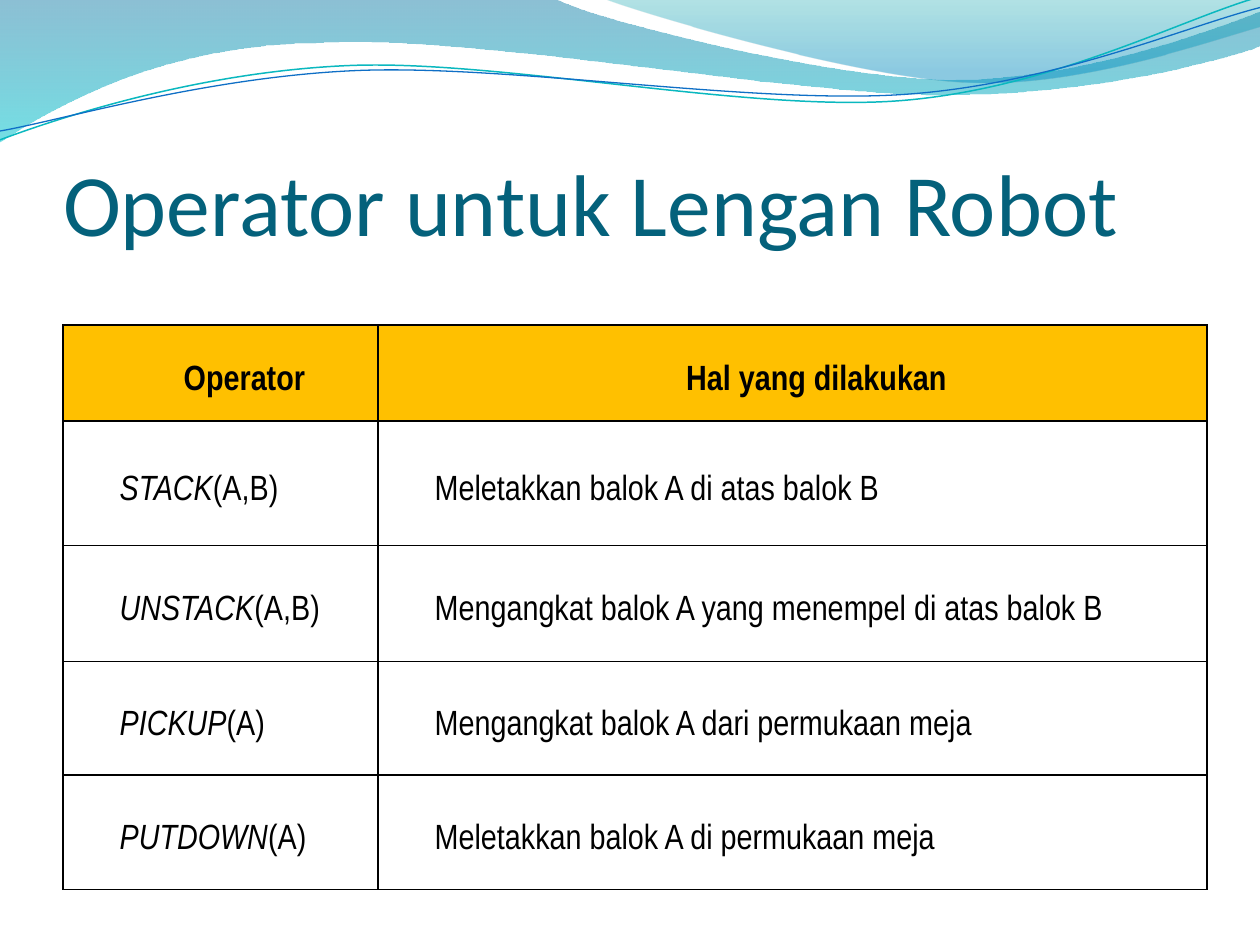
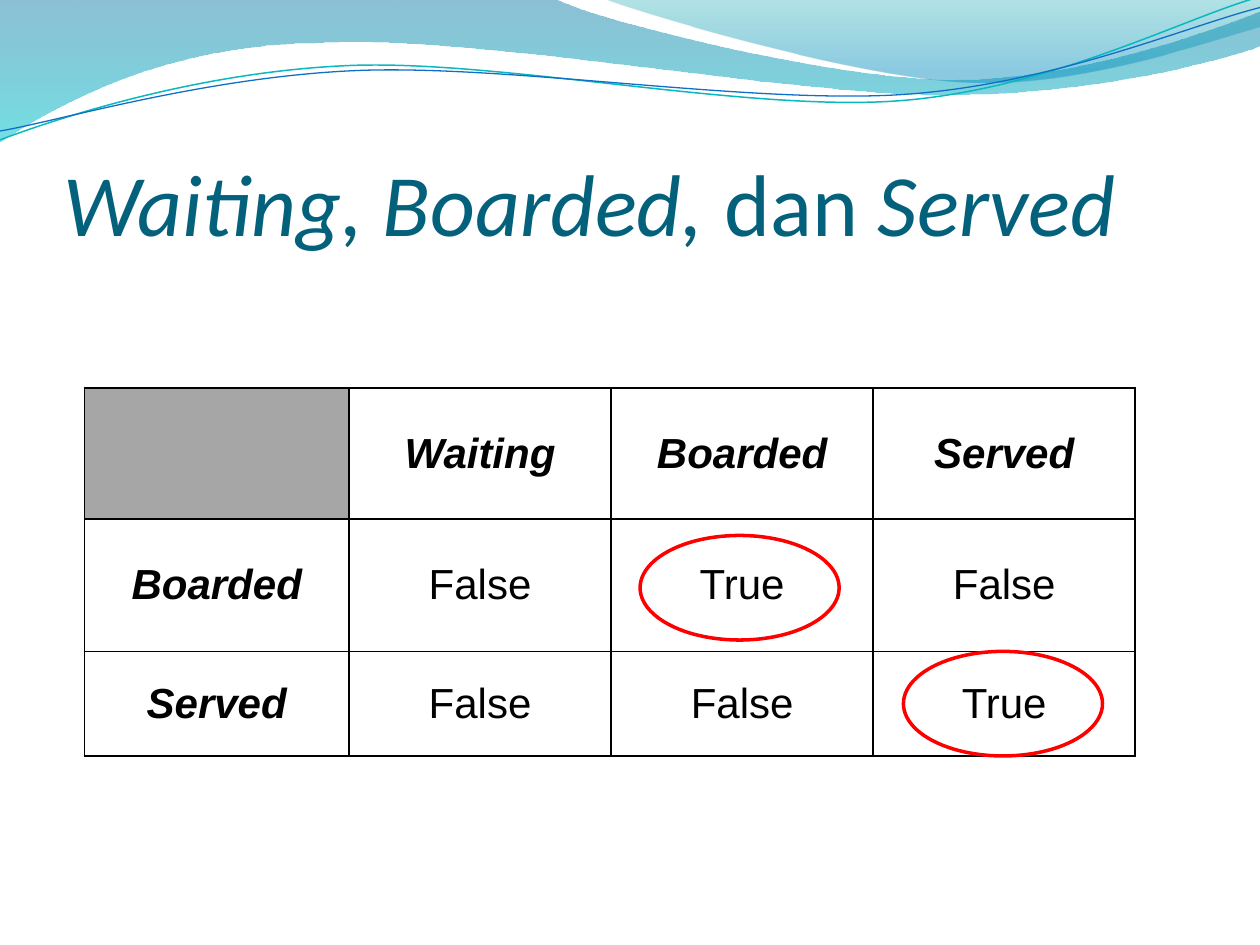
from math import cos, radians, sin

from lxml import etree
from pptx import Presentation
from pptx.dml.color import RGBColor
from pptx.enum.shapes import MSO_SHAPE
from pptx.enum.text import MSO_ANCHOR, MSO_AUTO_SIZE, PP_ALIGN
from pptx.oxml.ns import qn
from pptx.util import Inches, Pt

OVAL = MSO_SHAPE.OVAL
MIDDLE, BOTTOM = MSO_ANCHOR.MIDDLE, MSO_ANCHOR.BOTTOM
LEFT, CENTER, JUSTIFY = PP_ALIGN.LEFT, PP_ALIGN.CENTER, PP_ALIGN.JUSTIFY
FIXED = MSO_AUTO_SIZE.NONE

BLACK = RGBColor(0x00, 0x00, 0x00)
TEAL = RGBColor(0x04, 0x61, 0x7B)
GOLD = RGBColor(0xFF, 0xC0, 0x00)
GRAY = RGBColor(0xA6, 0xA6, 0xA6)
RED = RGBColor(0xFF, 0x00, 0x00)
AQUA = RGBColor(0x0A, 0xB8, 0xBF)
BLUE = RGBColor(0x0F, 0x6F, 0xC6)
DEEP = RGBColor(0x00, 0x74, 0xA1)
CYAN = RGBColor(0x00, 0xC6, 0xCF)
JADE = RGBColor(0x00, 0xA1, 0xA9)
SKY = RGBColor(0x00, 0x8B, 0xBF)

# Text is a list of runs: (words, style), style made of "b" and "i"
ROBOT_TITLE = [("Operator untuk Lengan Robot", "")]
ROBOT_HEAD = ["Operator", "Hal yang dilakukan"]
ROBOT_ACTS = [
    ("STACK", "(A,B)", "Meletakkan balok A di atas balok B"),
    ("UNSTACK", "(A,B)", "Mengangkat balok A yang menempel di atas balok B"),
    ("PICKUP", "(A)", "Mengangkat balok A dari permukaan meja"),
    ("PUTDOWN", "(A)", "Meletakkan balok A di permukaan meja"),
]
ROBOT_COLS, ROBOT_ROWS = [2.5, 6.58], [0.76, 0.99, 0.92, 0.9, 0.91]

STATE_TITLE = [("Waiting, Boarded, ", "i"), ("dan ", ""), ("Served", "i")]
STATE_GRID = [
    ["", "Waiting", "Boarded", "Served"],
    ["Boarded", "False", "True", "False"],
    ["Served", "False", "False", "True"],
]
STATE_COLS, STATE_ROWS = [2.1, 2.08, 2.08, 2.08], [1.04, 1.05, 0.83]
RINGS = [(5.08, 4.25), (7.17, 5.17)]

# Each wave is a start point and segments: 2 numbers a line, 6 a curve.
# Bands are (stops, start, segments), a stop being (place, colour, alpha %).
BANDS = [
    ([(0, DEEP, 45), (1, CYAN, 55)], (0, -0.01), [
        (4.4, -0.01), (4.76, 0.17, 6.64, 0.63, 7.58, 0.63),
        (8.53, 0.63, 9.58, 0.26, 10, 0.09), (10.01, 0.36),
        (9.83, 0.44, 8.7, 0.76, 7.46, 0.75),
        (6.22, 0.75, 3.82, 0.28, 2.57, 0.34),
        (1.29, 0.35, 0.46, 0.83, -0.01, 1.13)]),
    ([(0, JADE, 30), (0.8, SKY, 45)], (4.79, -0.01), [
        (5.09, 0.11, 6.82, 0.62, 7.69, 0.65),
        (8.56, 0.69, 9.61, 0.32, 10, 0.21), (10, 0)]),
]
LINES = [
    (AQUA, 0.85, (0, 1.11), [
        (0.48, 0.93, 1.58, 0.57, 2.77, 0.52),
        (3.95, 0.47, 5.93, 0.89, 7.13, 0.8),
        (8.33, 0.71, 9.38, 0.15, 9.98, -0.02)]),
    (BLUE, 0.75, (0, 1.04), [
        (0.47, 0.96, 1.64, 0.61, 2.83, 0.56),
        (4.03, 0.51, 5.97, 0.83, 7.17, 0.75),
        (8.36, 0.67, 9.41, 0.21, 10, 0.06)]),
]
TILT, PIVOT = 2.7, (4.99, 0.58)


# Waves
def turn(point, angle):
    """Turn a point clockwise about the pivot."""
    dx, dy = (a - b for a, b in zip(point, PIVOT))
    c, s = cos(radians(angle)), sin(radians(angle))
    return PIVOT[0] + dx * c - dy * s, PIVOT[1] + dx * s + dy * c


def add_wave(slide, start, parts, close, tilt=0):
    knots = [start]
    for part in parts:
        knots += zip(part[::2], part[1::2])
    pts = [tuple(Inches(n) for n in turn(knot, tilt)) for knot in knots]
    pen = slide.shapes.build_freeform(*pts[0])
    pen.add_line_segments(pts[1:], close=close)
    wave = pen.convert_to_shape()
    wave.shadow.inherit = False
    wave.rotation = -tilt
    # Join each three points of a curve into one cubic segment
    legs = iter(list(wave.element.iter(qn("a:lnTo"))))
    for part in parts:
        leg = next(legs)
        if len(part) == 6:
            leg.tag = qn("a:cubicBezTo")
            for _ in range(2):
                extra = next(legs)
                leg.append(extra[0])
                extra.getparent().remove(extra)
    return wave


def add_waves(slide, layout):
    """Draw the waves and move them to the layout that the slides share."""
    waves = []
    for stops, start, parts in BANDS:
        wave = add_wave(slide, start, parts, True)
        wave.line.fill.background()
        wave.fill.gradient()
        wave.fill.gradient_angle = 270
        for stop, (place, color, alpha) in zip(wave.fill.gradient_stops, stops):
            stop.position = place
            stop.color.rgb = color
        for tint, (_, _, alpha) in zip(wave.element.iter(qn("a:srgbClr")), stops):
            etree.SubElement(tint, qn("a:alpha"), val=str(alpha * 1000))
        waves.append(wave)
    for color, width, start, parts in LINES:
        wave = add_wave(slide, start, parts, False, TILT)
        wave.fill.background()
        wave.line.color.rgb = color
        wave.line.width = Pt(width)
        waves.append(wave)
    for spot, wave in enumerate(waves, 2):
        layout.shapes.element.insert(spot, wave.element)


# Text
def add_runs(para, runs, font, size, color):
    for words, style in runs:
        run = para.add_run()
        run.text = words
        run.font.name = font
        run.font.size = Pt(size)
        run.font.color.rgb = color
        run.font.bold = "b" in style
        run.font.italic = "i" in style


def set_title(slide, runs):
    title = slide.shapes.title
    title.left, title.top = Inches(0.5), Inches(0.77)
    title.width, title.height = Inches(9.08), Inches(1.25)
    frame = title.text_frame
    frame.auto_size = FIXED
    frame.word_wrap = True
    frame.vertical_anchor = BOTTOM
    frame.margin_left = frame.margin_right = frame.margin_bottom = 0
    frame.margin_top = Inches(0.05)
    para = frame.paragraphs[0]
    para.alignment = LEFT
    add_runs(para, runs, "Calibri", 50, TEAL)


# Tables
def set_cell(cell, fill):
    props = cell._tc.get_or_add_tcPr()
    for side in ("lnL", "lnR", "lnT", "lnB"):
        line = etree.SubElement(props, qn("a:" + side), w=str(Pt(1)))
        solid = etree.SubElement(line, qn("a:solidFill"))
        etree.SubElement(solid, qn("a:srgbClr"), val=str(BLACK))
    if fill is None:
        cell.fill.background()
    else:
        cell.fill.solid()
        cell.fill.fore_color.rgb = fill
    cell.vertical_anchor = MIDDLE
    cell.margin_left = cell.margin_right = Inches(0.07)
    cell.margin_top = cell.margin_bottom = 0


def add_grid(slide, left, top, cols, rows):
    table = slide.shapes.add_table(
        len(rows), len(cols), Inches(left), Inches(top),
        Inches(sum(cols)), Inches(sum(rows))).table
    table.first_row = table.horz_banding = False
    for col, width in zip(table.columns, cols):
        col.width = Inches(width)
    for row, height in zip(table.rows, rows):
        row.height = Inches(height)
    return table


def fill_robot(slide):
    table = add_grid(slide, 0.5, 2.58, ROBOT_COLS, ROBOT_ROWS)
    lines = [[[(head, "b")] for head in ROBOT_HEAD]]
    lines += [[[(name, "i"), (args, "")], [(deed, "")]]
              for name, args, deed in ROBOT_ACTS]
    for r, line in enumerate(lines):
        for c, runs in enumerate(line):
            cell = table.cell(r, c)
            set_cell(cell, GOLD if r == 0 else None)
            para = cell.text_frame.paragraphs[0]
            para.alignment = CENTER if r == 0 else JUSTIFY
            para.line_spacing = 1.5
            props = para._p.get_or_add_pPr()
            props.set("marL", "0")
            props.set("indent", str(Inches(0.38)))
            add_runs(para, runs, "Arial Narrow", 20, BLACK)


def fill_state(slide):
    table = add_grid(slide, 0.67, 3.08, STATE_COLS, STATE_ROWS)
    for r, line in enumerate(STATE_GRID):
        for c, word in enumerate(line):
            cell = table.cell(r, c)
            set_cell(cell, None if word else GRAY)
            if word:
                para = cell.text_frame.paragraphs[0]
                para.alignment = CENTER
                style = "bi" if r == 0 or c == 0 else ""
                add_runs(para, [(word, style)], "Arial", 24, BLACK)
    # Rings around the true values
    for left, top in RINGS:
        ring = slide.shapes.add_shape(
            OVAL, Inches(left), Inches(top), Inches(1.58), Inches(0.83))
        ring.shadow.inherit = False
        ring.fill.background()
        ring.line.color.rgb = RED
        ring.line.width = Pt(2)


def main():
    prs = Presentation()
    prs.slide_width, prs.slide_height = Inches(10), Inches(7.5)
    layout = prs.slide_layouts[5]
    robot, state = (prs.slides.add_slide(layout) for _ in range(2))
    add_waves(robot, layout)
    set_title(robot, ROBOT_TITLE)
    fill_robot(robot)
    set_title(state, STATE_TITLE)
    fill_state(state)
    prs.save("out.pptx")


if __name__ == "__main__":
    main()
